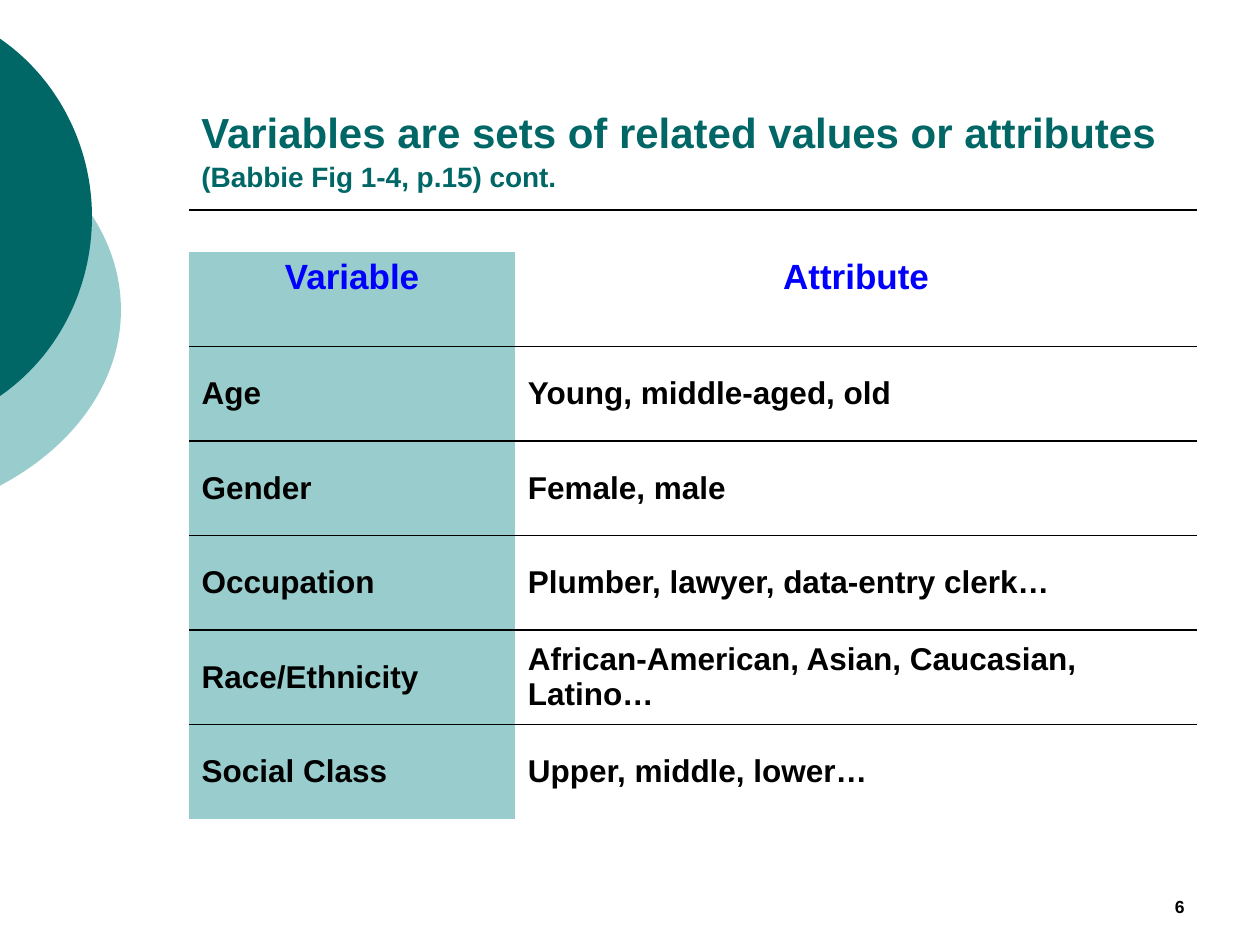
import pptx
import pptx.dml.color
import pptx.enum.shapes
import pptx.enum.text
import pptx.oxml
import pptx.oxml.ns
import pptx.util

ALIGN = pptx.enum.text.PP_ALIGN
ANCHOR = pptx.enum.text.MSO_ANCHOR
TEAL, MIST, BLACK, BLUE = "006666", "99CCCC", "000000", "0000FF"
LEFT, CONTENT_WIDTH = 1.5, 8
NAMESPACE = pptx.oxml.ns.nsdecls("a")

ROWS = [
    ("Variable", "Attribute"),
    ("Age", "Young, middle-aged, old"),
    ("Gender", "Female, male"),
    ("Occupation", "Plumber, lawyer, data-entry clerk…"),
    ("Race/Ethnicity", "African-American, Asian, Caucasian, Latino…"),
    ("Social Class", "Upper, middle, lower…"),
]


def color(value):
    return pptx.dml.color.RGBColor.from_string(value)


class SlideBuilder:
    """Holds the slide and its style; lengths are in units of a one-inch grid."""

    font_name = "Arial"

    def __init__(self, deck):
        self.slide = deck.slides.add_slide(deck.slide_layouts[6])
        self.shapes = self.slide.shapes

    def grid(self, *lengths):
        return [pptx.util.Inches(length) for length in lengths]

    def style(self, font, size, ink):
        font.name, font.bold = self.font_name, True
        font.size = pptx.util.Pt(size)
        font.color.rgb = color(ink)

    def disc_edge(self, frame, upper, lower, fill):
        """Draw the visible edge of a disc whose frame starts left of the slide.

        upper holds the start and the curve to the tip, lower the curve back.
        """
        left, top, width, height = self.grid(*frame)
        outline = self.shapes.build_freeform(*self.grid(*upper[0]))
        outline.add_line_segments(
            [self.grid(*upper[-1]), self.grid(*lower[-1])], close=True)
        disc = outline.convert_to_shape()
        disc.left, disc.top, disc.width, disc.height = left, top, width, height
        disc.shadow.inherit = False
        disc.fill.solid()
        disc.fill.fore_color.rgb = color(fill)
        disc.line.fill.background()

        def points(pairs):
            places = (self.grid(*pair) for pair in pairs)
            return "".join(f'<a:pt x="{x - left}" y="{y - top}"/>' for x, y in places)

        path = disc._element.spPr.find(".//" + pptx.oxml.ns.qn("a:path"))
        path.getparent().replace(path, pptx.oxml.parse_xml(
            f'<a:path {NAMESPACE} w="{width}" h="{height}">'
            f"<a:moveTo>{points(upper[:1])}</a:moveTo>"
            f"<a:cubicBezTo>{points(upper[1:])}</a:cubicBezTo>"
            f"<a:cubicBezTo>{points(lower)}</a:cubicBezTo><a:close/></a:path>"))

    def rule(self, y):
        line = self.shapes.add_connector(
            pptx.enum.shapes.MSO_CONNECTOR.STRAIGHT,
            *self.grid(LEFT, y, LEFT + CONTENT_WIDTH, y))
        line.line.color.rgb = color(BLACK)
        line.line.width = pptx.util.Pt(1)
        line._element.spPr.append(pptx.oxml.parse_xml(f"<a:effectLst {NAMESPACE}/>"))

    def text(self, box, runs, ink, align=ALIGN.LEFT):
        """Add bottom-anchored text; runs are (text, size) pairs."""
        frame = self.shapes.add_textbox(*self.grid(*box)).text_frame
        frame.word_wrap = True
        frame.vertical_anchor = ANCHOR.BOTTOM
        paragraph = frame.paragraphs[0]
        paragraph.alignment = align
        self.style(paragraph.font, runs[0][1], ink)
        for words, size in runs:
            run = paragraph.add_run()
            run.text = words
            run.font.size = pptx.util.Pt(size)

    def borders(self, cell, top, bottom):
        properties = cell._tc.get_or_add_tcPr()
        sides = {"lnL": False, "lnR": False, "lnT": top, "lnB": bottom}
        for place, (side, shown) in enumerate(sides.items()):
            paint = (f'<a:solidFill><a:srgbClr val="{BLACK}"/></a:solidFill>'
                     if shown else "<a:noFill/>")
            properties.insert(place, pptx.oxml.parse_xml(
                f'<a:{side} {NAMESPACE} w="12700">{paint}</a:{side}>'))

    def table(self, top, widths, row_height, rows):
        frame = self.shapes.add_table(
            len(rows), len(widths),
            *self.grid(LEFT, top, CONTENT_WIDTH, row_height * len(rows)))
        table = frame.table
        table.first_row = table.horz_banding = False
        for column, width in zip(table.columns, widths):
            column.width = pptx.util.Inches(width)
        for r, row in enumerate(rows):
            for c, words in enumerate(row):
                cell = table.cell(r, c)
                header = r == 0
                cell.text = words
                cell.vertical_anchor = ANCHOR.TOP if header else ANCHOR.MIDDLE
                paragraph = cell.text_frame.paragraphs[0]
                paragraph.alignment = ALIGN.CENTER if header else ALIGN.LEFT
                self.style(paragraph.font, 20 if header else 18,
                           BLUE if header else BLACK)
                if c == 0:
                    cell.fill.solid()
                    cell.fill.fore_color.rgb = color(MIST)
                else:
                    cell.fill.background()
                self.borders(cell, top=not header, bottom=r < len(rows) - 1)


def main():
    deck = pptx.Presentation()
    deck.slide_width, deck.slide_height = pptx.util.Inches(10), pptx.util.Inches(7.5)
    page = SlideBuilder(deck)
    page.disc_edge((-3.54, 0.75, 4.5, 3.42),
                   [(-0.01, 1.06), (0.6, 1.38), (0.96, 1.9), (0.96, 2.46)],
                   [(0.96, 3.02), (0.6, 3.54), (-0.01, 3.86)], MIST)
    page.disc_edge((-2.65, 0, 3.38, 3.45),
                   [(-0.01, 0.3), (0.46, 0.62), (0.73, 1.16), (0.73, 1.72)],
                   [(0.73, 2.29), (0.46, 2.83), (-0.01, 3.15)], TEAL)
    page.rule(5 / 3)
    page.text((7.17, 6.83, 2.33, 0.5), [("6", 10)], BLACK, ALIGN.RIGHT)
    page.text((LEFT, 0.33, CONTENT_WIDTH, 1.25), [
        ("Variables are sets of related values or attributes", 24),
        (" ", 30),
        ("(Babbie Fig 1-4, p.15) cont.", 16),
    ], TEAL)
    page.table(2, (2.59, 5.41), 0.75, ROWS)
    deck.save("out.pptx")


if __name__ == "__main__":
    main()
